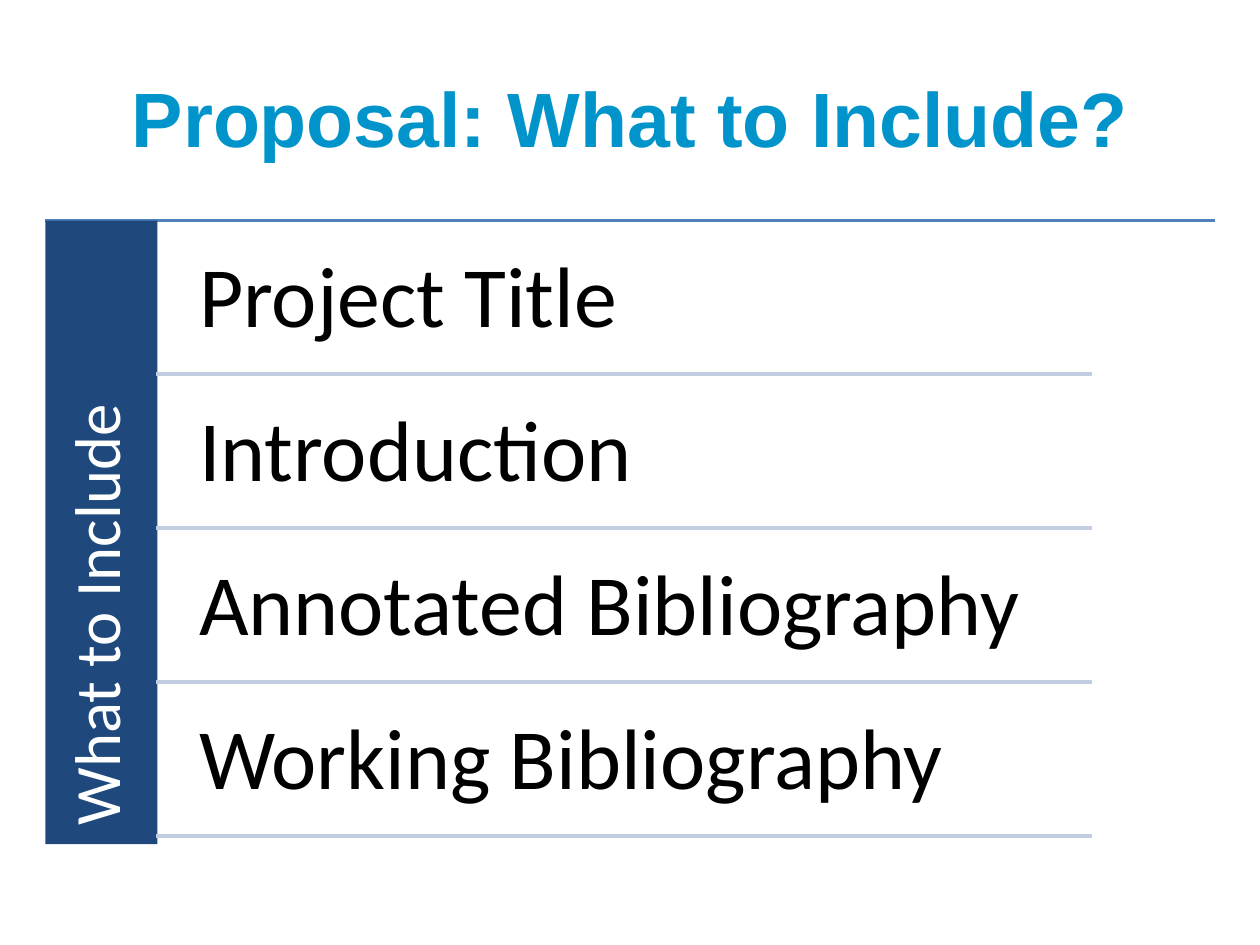
from typing import NamedTuple

from lxml.etree import SubElement
from pptx import Presentation
from pptx.dml.color import RGBColor
from pptx.enum.shapes import MSO_CONNECTOR as Link, MSO_SHAPE as Form
from pptx.enum.text import MSO_ANCHOR as Anchor, MSO_AUTO_SIZE as Fit, PP_ALIGN as Align
from pptx.oxml.ns import qn
from pptx.util import Inches, Pt

# The slide is a grid of 100 columns by 75 rows.
UNIT = Inches(0.1)
LEFT, RIGHT, TOP = 3.6, 96.4, 17.5
BAR_W, BAR_H = 8.9, 49.5
STEP, GAP = 12.23, 0.58
TEXT_X, TEXT_W, TEXT_H = 13.8, 72.9, 11.6
RULE_L, RULE_R = 12.4, 86.7

BLUE, NAVY, PALE, CYAN = "4F81BD", "1F497D", "C2CDE1", "0094CB"
TOPICS = ["Project Title", "Introduction", "Annotated Bibliography", "Working Bibliography"]


class Box(NamedTuple):
    x: float
    y: float
    w: float
    h: float


class Rule(NamedTuple):
    x: float
    end: float
    y: float
    tint: str


def span(n: float) -> int:
    """Grid units to slide length."""
    return round(n * UNIT)


def color(tint: str) -> RGBColor:
    return RGBColor.from_string(tint)


def put(item, attrs: dict) -> None:
    for name, value in attrs.items():
        setattr(item, name, value)


def place(shape, box: Box) -> None:
    put(shape, dict(zip(("left", "top", "width", "height"), map(span, box))))


def write(shape, text: str, size: float, tint: str, inset: float = 1, face: str = "Calibri",
          bold: bool = False, align=Align.LEFT, anchor=Anchor.TOP, lead: float = 0.9) -> None:
    frame = shape.text_frame
    put(frame, {"text": text, "word_wrap": True, "auto_size": Fit.NONE,
                "vertical_anchor": anchor})
    put(frame, {f"margin_{side}": span(inset) for side in ("left", "top", "right", "bottom")})
    para = frame.paragraphs[0]
    put(para, {"alignment": align, "line_spacing": lead})
    font = para.runs[0].font
    put(font, {"name": face, "size": Pt(size), "bold": bold})
    font.color.rgb = color(tint)


def draw_rule(shapes, rule: Rule) -> None:
    y = span(rule.y)
    line = shapes.add_connector(Link.STRAIGHT, span(rule.x), y, span(rule.end), y)
    line.line.width = Pt(2)
    line.line.color.rgb = color(rule.tint)
    SubElement(line._element.spPr, qn("a:effectLst"))


def draw_bar(shapes, box: Box, text: str) -> None:
    bar = shapes.add_shape(Form.RECTANGLE, *map(span, box))
    bar.shadow.inherit = False
    bar.fill.solid()
    bar.fill.fore_color.rgb = color(NAVY)
    bar.line.fill.background()
    write(bar, text, 37, "FFFFFF", inset=1.5)
    bar.text_frame._txBody.bodyPr.set("vert", "vert270")


def draw_topic(shapes, row: int, text: str) -> None:
    top = TOP + GAP + row * STEP
    box = shapes.add_textbox(*map(span, Box(TEXT_X, top, TEXT_W, TEXT_H)))
    write(box, text, 49, "000000", inset=2)
    draw_rule(shapes, Rule(RULE_L, RULE_R, top + TEXT_H, PALE))


def main() -> None:
    deck = Presentation()
    put(deck, {"slide_width": span(100), "slide_height": span(75)})
    shapes = deck.slides.add_slide(deck.slide_layouts[5]).shapes
    place(shapes.title, Box(LEFT, 3, 92.9, 12.5))
    write(shapes.title, "Proposal: What to Include?", 44, CYAN, face="Arial", bold=True,
          align=Align.CENTER, anchor=Anchor.MIDDLE, lead=1.0)
    draw_rule(shapes, Rule(LEFT, RIGHT, TOP, BLUE))
    draw_bar(shapes, Box(LEFT, TOP, BAR_W, BAR_H), "What to Include")
    for row, topic in enumerate(TOPICS):
        draw_topic(shapes, row, topic)
    deck.save("out.pptx")


if __name__ == "__main__":
    main()
